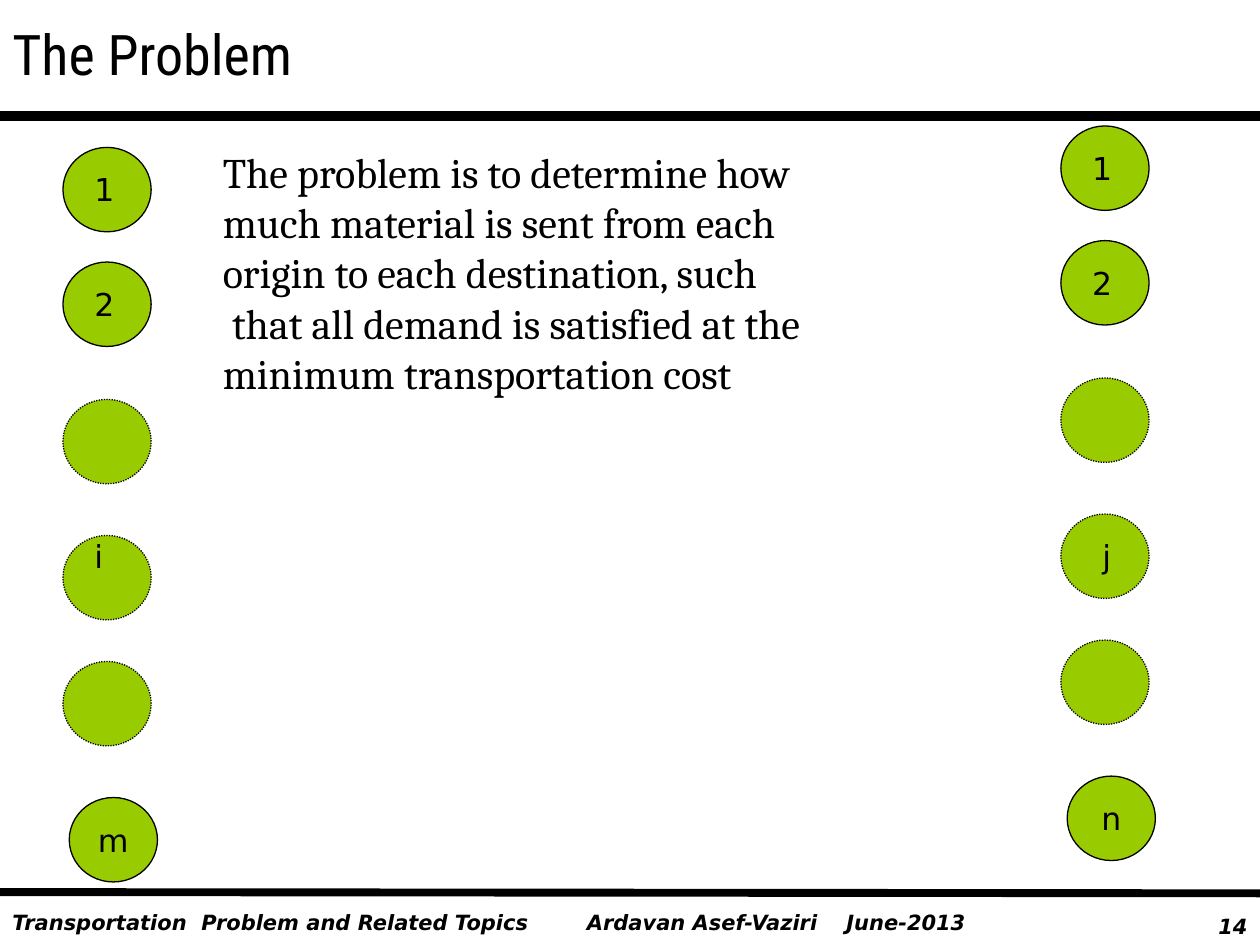
"""Build the transportation problem slide with origin and destination nodes."""
from lxml.etree import SubElement
from pptx import Presentation
from pptx.dml.color import RGBColor
from pptx.enum.dml import MSO_LINE
from pptx.enum.shapes import MSO_CONNECTOR, MSO_SHAPE
from pptx.enum.text import MSO_ANCHOR, PP_ALIGN
from pptx.oxml.ns import qn
from pptx.util import Inches, Pt

BLACK, GREEN = "000000", "99CC00"
SANS, SERIF, HEADING = "DejaVu Sans", "Cambria", "Roboto Condensed"
NODE_W, NODE_H = 0.7, 0.67
NODE_TOPS = [1.17, 2.08, 3.17, 4.25, 5.25]
DOTTED = [False, False, True, True, True]
LAST_TOP, LAST_SHIFT = 6.33, 0.05
COLUMNS = [
    {"left": 0.5, "rise": 0, "last": "m",
     "labels": [("1", 0.65, 1.3, 0.37), ("2", 0.65, 2.21, 0.37), ("i", 0.65, 4.21, 0.29)]},
    {"left": 8.42, "rise": 0.17, "last": "n",
     "labels": [("1", 8.57, 1.13, 0.37), ("2", 8.57, 2.05, 0.37), ("j", 8.65, 4.21, 0.29)]},
]
RULES = [(0.92, 0.92, 6), (7.08, 7.09, 4.5)]
FOOTER = [
    ("14", (9.25, 7.2, 0.75, 0.3), PP_ALIGN.RIGHT),
    ("Ardavan Asef-Vaziri    June-2013", (4.56, 7.17, 3.35, 0.3), PP_ALIGN.LEFT),
    ("Transportation  Problem and Related Topics", (0, 7.17, 4.67, 0.3), PP_ALIGN.LEFT),
]
STATEMENT = [
    "The problem is to determine how",
    "much material is sent from each",
    "origin to each destination, such",
    " that all demand is satisfied at the",
    "minimum transportation cost",
]


def rgb(value):
    return RGBColor.from_string(value)


def write(tf, lines, size=18, font=SANS, bold=False, italic=False, align=PP_ALIGN.LEFT):
    for i, line in enumerate(lines):
        p = tf.paragraphs[0] if i == 0 else tf.add_paragraph()
        p.alignment = align
        r = p.add_run()
        r.text = line
        r.font.size, r.font.name = Pt(size), font
        r.font.bold, r.font.italic = bold, italic
        r.font.color.rgb = rgb(BLACK)


def add_text(s, box, lines, **style):
    tf = s.shapes.add_textbox(*map(Inches, box)).text_frame
    tf.word_wrap = True
    write(tf, lines, **style)


def add_node(s, left, top, dotted=False, label=None):
    sp = s.shapes.add_shape(MSO_SHAPE.OVAL, *map(Inches, (left, top, NODE_W, NODE_H)))
    sp.shadow.inherit = False
    sp.fill.solid()
    sp.fill.fore_color.rgb = rgb(GREEN)
    sp.line.color.rgb = rgb(BLACK)
    sp.line.width = Pt(0.75)
    if dotted:
        sp.line.dash_style = MSO_LINE.ROUND_DOT
    if label:
        tf = sp.text_frame
        tf.word_wrap = False
        tf.vertical_anchor = MSO_ANCHOR.MIDDLE
        write(tf, [label], align=PP_ALIGN.CENTER)


def add_rule(s, start, end, width):
    sp = s.shapes.add_connector(MSO_CONNECTOR.STRAIGHT, Inches(0), Inches(start),
                                Inches(10), Inches(end))
    sp.line.color.rgb = rgb(BLACK)
    sp.line.width = Pt(width)
    SubElement(sp._element.spPr, qn("a:effectLst"))


def main():
    prs = Presentation()
    prs.slide_width, prs.slide_height = Inches(10), Inches(7.5)
    s = prs.slides.add_slide(prs.slide_layouts[6])
    for text, box, align in FOOTER:
        add_text(s, box, [text], size=12, bold=True, italic=True, align=align)
    for rule in RULES:
        add_rule(s, *rule)
    add_text(s, (0, 0.11, 10, 0.64), ["The Problem"], size=32, font=HEADING)
    for col in COLUMNS:
        add_node(s, col["left"] + LAST_SHIFT, LAST_TOP - col["rise"], label=col["last"])
        for top, dotted in zip(NODE_TOPS, DOTTED):
            add_node(s, col["left"], top - col["rise"], dotted)
        for text, left, top, width in col["labels"]:
            add_text(s, (left, top, width, 0.5), [text])
    add_text(s, (1.67, 1.11, 5.29, 2.12), STATEMENT, size=24, font=SERIF)
    prs.save("out.pptx")


if __name__ == "__main__":
    main()
